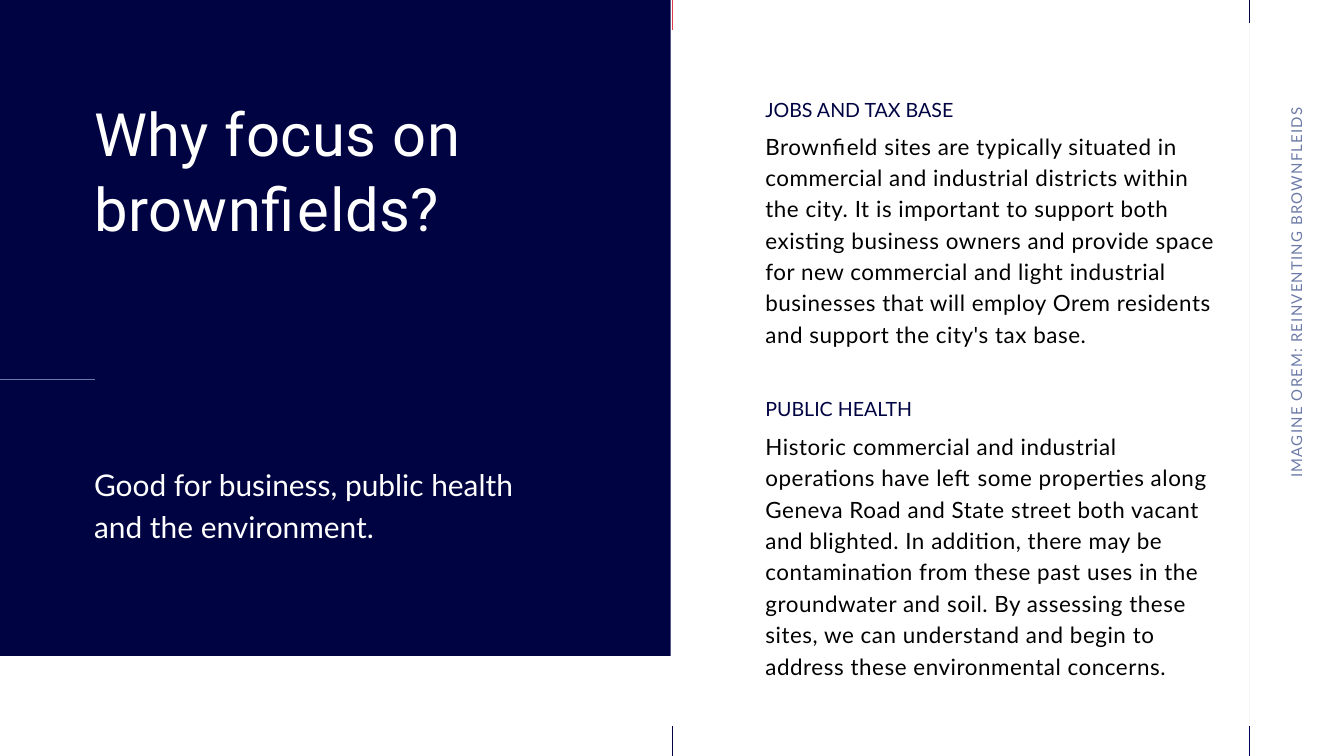
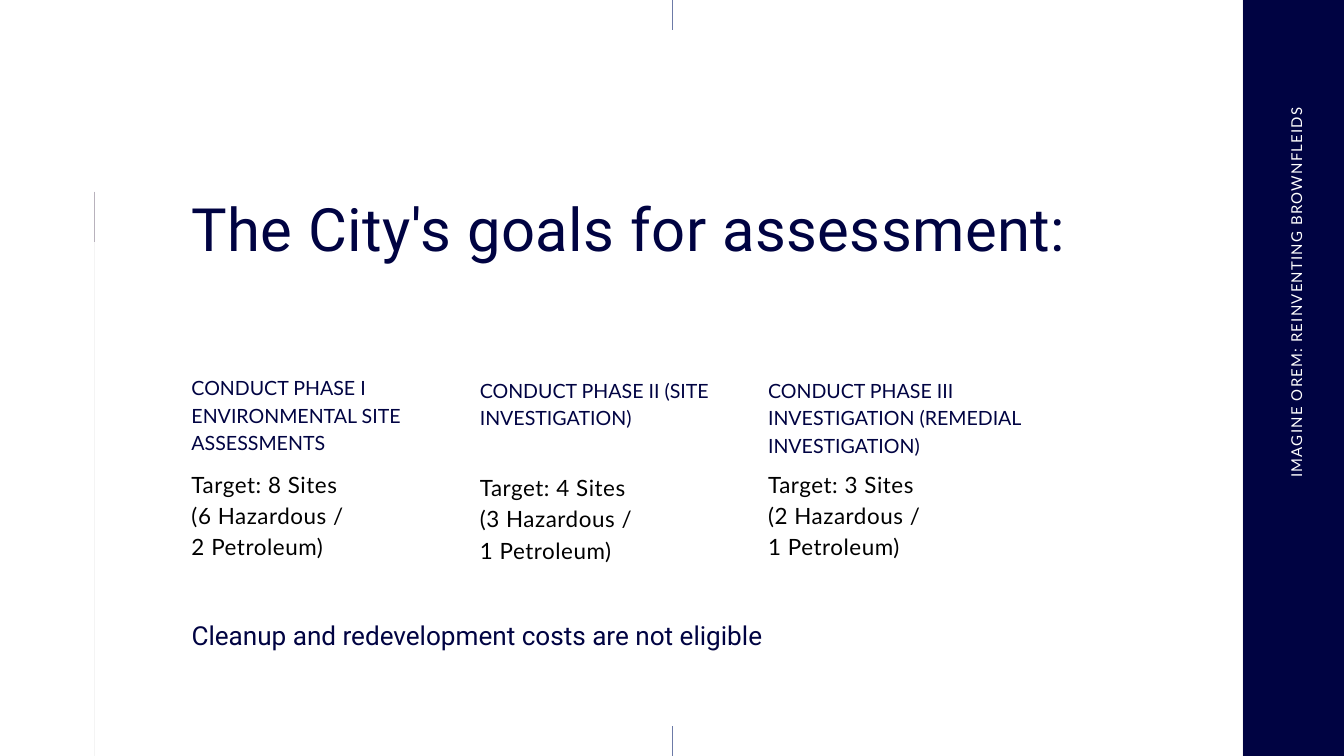
from collections import namedtuple

from pptx import Presentation
from pptx import util as u
from pptx.dml.color import RGBColor
from pptx.enum import shapes, text
from pptx.oxml.ns import qn
from lxml import etree

COLS, ROWS = 20, 11.25
UNIT = u.Inches(1)

NAVY = RGBColor(0x00, 0x03, 0x42)
DEEP_BLUE = RGBColor(0x00, 0x04, 0x5B)
SLATE = RGBColor(0x6C, 0x7A, 0xA7)
MAUVE = RGBColor(0xB8, 0xB2, 0xBC)
MIST = RGBColor(0xF4, 0xF4, 0xF4)
RED = RGBColor(0xDC, 0x3C, 0x4D)
WHITE = RGBColor(0xFF, 0xFF, 0xFF)
BLACK = RGBColor(0x00, 0x00, 0x00)

Style = namedtuple("Style", "font size leading spacing color")
TITLE = Style("Roboto", 64, 80.6, 60, NAVY)
HEADING = Style("Lato", 21, 29.4, 0, NAVY)
BODY = Style("Lato", 24, 33.6, 60, BLACK)
LEAD = Style("Lato", 32, 44.8, 0, WHITE)
NOTE = Style("Roboto", 28, 39.2, 0, NAVY)
RUNNING = Style("Lato", 16, 22.4, 130, SLATE)

MARGIN = 1.41
CENTRE = COLS / 2
MARK_TOP, MARK_BOTTOM = 0.45, 10.81
CENTRE_MARK, EDGE_MARK = 1.35, 1.14
RULE_TOP, RULE_BOTTOM = -0.31, 12.08
RUNNING_TITLE = "IMAGINE OREM: REINVENTING BROWNFLEIDS"

REASONS_LEFT, REASONS_WIDTH = 11.39, 6.74
REASONS = [
    (1.4, 1.91, 3.27, "JOBS AND TAX BASE",
     "Brownfield sites are typically situated in commercial and industrial "
     "districts within the city. It is important to support both existing "
     "business owners and provide space for new commercial and light "
     "industrial businesses that will employ Orem residents and support "
     "the city's tax base."),
    (5.85, 6.38, 3.8, "PUBLIC HEALTH",
     "Historic commercial and industrial operations have left some "
     "properties along Geneva Road and State street both vacant and "
     "blighted. In addition, there may be contamination from these past "
     "uses in the groundwater and soil. By assessing these sites, we can "
     "understand and begin to address these environmental concerns."),
]

PHASES_LEFT, PHASE_STEP, PHASE_WIDTH = 2.85, 4.29, 3.8
PHASES = [
    (5.54, 6.94, "CONDUCT PHASE I ENVIRONMENTAL SITE ASSESSMENTS",
     "Target: 8 Sites\n(6 Hazardous /\n2 Petroleum)"),
    (5.58, 6.99, "CONDUCT PHASE II (SITE INVESTIGATION)",
     "Target: 4 Sites\n(3 Hazardous /\n1 Petroleum)"),
    (5.58, 6.94, "CONDUCT PHASE III INVESTIGATION (REMEDIAL INVESTIGATION)",
     "Target: 3 Sites\n(2 Hazardous /\n1 Petroleum)"),
]


def grid(*cells):
    """Convert columns and rows to slide lengths."""
    return [round(cell * UNIT) for cell in cells]


def add_panel(slide, left, top, width, height):
    """Add a plain navy panel."""
    sp = slide.shapes.add_shape(shapes.MSO_SHAPE.RECTANGLE,
                                *grid(left, top, width, height))
    sp.shadow.inherit = False
    sp.fill.solid()
    sp.fill.fore_color.rgb = NAVY
    sp.line.fill.background()


def add_rule(slide, x1, y1, x2, y2, color):
    """Add a hairline between two grid points."""
    line = slide.shapes.add_connector(shapes.MSO_CONNECTOR.STRAIGHT,
                                      *grid(x1, y1, x2, y2))
    line.line.color.rgb = color
    line.line.width = u.Pt(1)
    etree.SubElement(line._element.spPr, qn("a:effectLst"))


def add_vertical(slide, x, color, top=RULE_TOP, bottom=RULE_BOTTOM):
    """Add a vertical hairline, by default bleeding off both edges."""
    add_rule(slide, x, top, x, bottom, color)


def add_text(slide, left, top, width, height, content, style,
             align=text.PP_ALIGN.LEFT):
    """Add a text box in one style, with one paragraph per line."""
    sp = slide.shapes.add_textbox(*grid(left, top, width, height))
    tf = sp.text_frame
    tf.word_wrap = True
    tf.auto_size = text.MSO_AUTO_SIZE.SHAPE_TO_FIT_TEXT
    tf.margin_left = tf.margin_right = tf.margin_top = tf.margin_bottom = 0
    tf.text = content
    for p in tf.paragraphs:
        p.alignment = align
        p.line_spacing = u.Pt(style.leading)
        for r in p.runs:
            r.font.name = style.font
            r.font.size = u.Pt(style.size)
            r.font.color.rgb = style.color
            if style.spacing:
                r._r.get_or_add_rPr().set("spc", str(style.spacing))
    return sp


def add_running_title(slide, color):
    """Add the running title that reads upwards along the right edge."""
    sp = add_text(slide, 16.18, 4.53, 6.16, 0.3, RUNNING_TITLE,
                  RUNNING._replace(color=color), text.PP_ALIGN.RIGHT)
    sp.rotation = 270


def add_marks(slide, x, length, top_end, top_color, bottom_color):
    """Add the short marks that bleed off the top and bottom edges."""
    add_vertical(slide, x, top_color, top_end - length, top_end)
    add_vertical(slide, x, bottom_color, MARK_BOTTOM, MARK_BOTTOM + length)


def build_reasons(slide):
    """Build the slide on why brownfields matter."""
    edge = 18.59
    add_panel(slide, -0.02, -0.01, 10, 9.77)
    add_text(slide, 1.4, 1.39, 6.78, 2.21, "Why focus on brownfields?",
             TITLE._replace(color=WHITE))
    for heading_top, body_top, height, heading, body in REASONS:
        add_text(slide, REASONS_LEFT, heading_top, REASONS_WIDTH, 0.4,
                 heading, HEADING)
        add_text(slide, REASONS_LEFT, body_top, REASONS_WIDTH, height,
                 body, BODY)
    add_vertical(slide, edge, MIST)
    add_marks(slide, edge, EDGE_MARK, 0.35, NAVY, DEEP_BLUE)
    add_text(slide, 1.4, 6.86, 6.78, 1.21,
             "Good for business, public health and the environment.", LEAD)
    add_rule(slide, -0.61, 5.64, MARGIN, 5.64, SLATE)
    add_marks(slide, CENTRE, CENTRE_MARK, MARK_TOP, RED, NAVY)
    add_running_title(slide, SLATE)


def build_goals(slide):
    """Build the slide on the assessment goals."""
    band_left = 18.5
    add_text(slide, PHASES_LEFT, 2.8, 15, 1.1,
             "The City's goals for assessment:", TITLE)
    for i, (heading_top, target_top, heading, target) in enumerate(PHASES):
        left = PHASES_LEFT + i * PHASE_STEP
        add_text(slide, left, heading_top, PHASE_WIDTH, 1.21, heading, HEADING)
        add_text(slide, left, target_top, PHASE_WIDTH, 1.38, target, BODY)
    add_vertical(slide, MARGIN, MIST, top=3.19, bottom=11.67)
    add_panel(slide, band_left, 0, 1.53, 11.27)
    add_vertical(slide, band_left - 0.01, MIST)
    add_vertical(slide, MARGIN, MAUVE, top=2.85, bottom=3.6)
    add_marks(slide, CENTRE, CENTRE_MARK, MARK_TOP, SLATE, SLATE)
    add_running_title(slide, WHITE)
    add_text(slide, PHASES_LEFT, 9.14, 10.95, 0.53,
             "Cleanup and redevelopment costs are not eligible", NOTE)


def main():
    """Build both slides and save the deck."""
    prs = Presentation()
    prs.slide_width, prs.slide_height = grid(COLS, ROWS)
    for build in (build_reasons, build_goals):
        build(prs.slides.add_slide(prs.slide_layouts[6]))
    prs.save("out.pptx")


if __name__ == "__main__":
    main()
